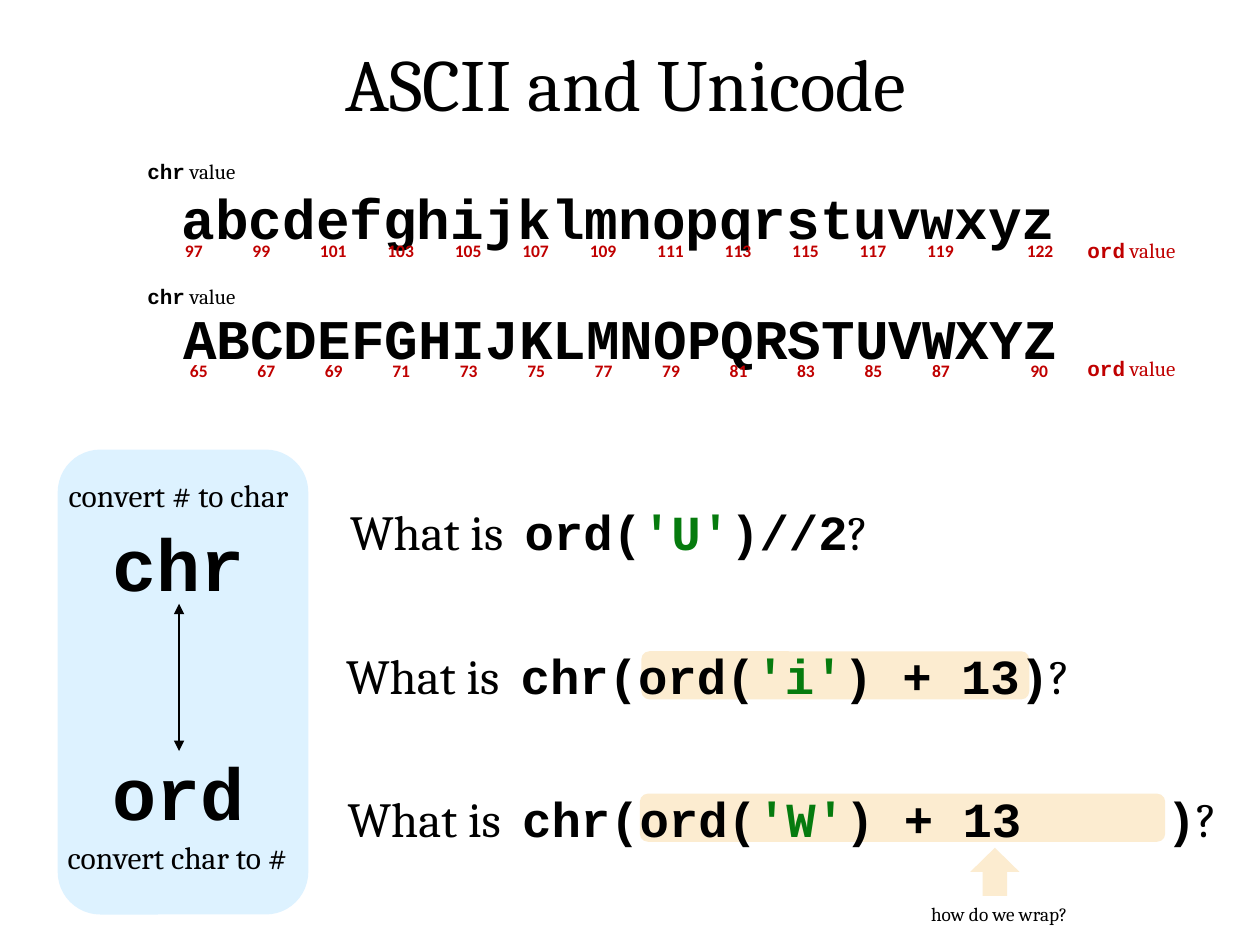
from dataclasses import dataclass
from typing import NamedTuple, Optional

from pptx import Presentation
from pptx.dml.color import RGBColor
from pptx.enum.shapes import MSO_CONNECTOR, MSO_SHAPE
from pptx.enum.text import MSO_ANCHOR, MSO_AUTO_SIZE, PP_ALIGN
from pptx.oxml.ns import qn
from pptx.util import Cm, Pt
from lxml.etree import SubElement


@dataclass(frozen=True)
class Theme:
    black: str = "000000"
    red: str = "C00000"
    green: str = "067B0E"
    blue: str = "DDF2FF"
    cream: str = "FCECD0"
    serif: str = "Cambria"
    code: str = "Courier New"
    sans: str = "Calibri"
    display: int = 42
    alphabet: int = 32
    question: int = 28
    caption: int = 18
    label: int = 12
    note: int = 11
    number: int = 10


THEME = Theme()


class Box(NamedTuple):
    """Left, top, width and height in centimetres."""
    left: float
    top: float
    width: float
    height: float

    def lengths(self) -> list:
        return [Cm(value) for value in self]


class Piece(NamedTuple):
    text: str
    font: str = THEME.serif
    color: str = THEME.black
    bold: bool = False


class Alphabet(NamedTuple):
    letters: str
    letters_box: Box
    chr_top: float
    ord_top: float
    number_left: float
    number_top: float
    last_left: float


class Question(NamedTuple):
    box: Box
    before: str
    character: str
    after: str
    tab_stop: Optional[float] = None


ALPHABETS = [
    Alphabet("abcdefghijklmnopqrstuvwxyz", Box(2.74, 3.58, 19.48, 1.6),
             3.07, 4.67, 3.48, 4.72, 20.45),
    Alphabet("ABCDEFGHIJKLMNOPQRSTUVWXYZ", Box(2.77, 5.99, 19.48, 1.6),
             5.59, 7.04, 3.58, 7.14, 20.52),
]
QUESTIONS = [
    Question(Box(6.81, 9.98, 14.55, 1.45), "ord(", "'U'", ")//2"),
    Question(Box(6.73, 12.88, 17.68, 1.45), "chr(ord(", "'i'", ") + 13)"),
    Question(Box(6.76, 15.77, 18.21, 1.45), "chr(ord(", "'W'", ") + 13\t)", 16.51),
]
NUMBER_STEP = 1.36


def code(text: str, color: str = THEME.black) -> Piece:
    return Piece(text, THEME.code, color, True)


def write(slide, box: Box, *pieces: Piece, size: int, align=PP_ALIGN.LEFT,
          wrap: bool = True, spaced: bool = True, tab_stop=None, shape=None):
    """Write one paragraph into a new text box, or into the given shape."""
    if shape is None:
        shape = slide.shapes.add_textbox(*box.lengths())
    else:
        shape.left, shape.top, shape.width, shape.height = box.lengths()
    frame = shape.text_frame
    frame.word_wrap = wrap
    frame.auto_size = MSO_AUTO_SIZE.SHAPE_TO_FIT_TEXT
    frame.vertical_anchor = MSO_ANCHOR.TOP
    paragraph = frame.paragraphs[0]
    paragraph.alignment = align
    properties = paragraph._p.get_or_add_pPr()
    if spaced:
        before = SubElement(properties, qn("a:spcBef"))
        SubElement(before, qn("a:spcPct"), val="50000")
    if tab_stop is not None:
        tabs = SubElement(properties, qn("a:tabLst"))
        SubElement(tabs, qn("a:tab"), pos=str(int(Cm(tab_stop))), algn="l")
    for piece in pieces:
        run = paragraph.add_run()
        run.text = piece.text
        run.font.name = piece.font
        run.font.size = Pt(size)
        run.font.bold = piece.bold
        run.font.color.rgb = RGBColor.from_string(piece.color)


def add_block(slide, kind, box: Box, fill: str, outlined: bool = False):
    shape = slide.shapes.add_shape(kind, *box.lengths())
    shape.shadow.inherit = False
    shape.fill.solid()
    shape.fill.fore_color.rgb = RGBColor.from_string(fill)
    if outlined:
        shape.line.color.rgb = RGBColor.from_string(fill)
        shape.line.width = Pt(1.5)
    else:
        shape.line.fill.background()
    return shape


def add_double_arrow(slide, x: float, top: float, bottom: float) -> None:
    connector = slide.shapes.add_connector(
        MSO_CONNECTOR.STRAIGHT, Cm(x), Cm(top), Cm(x), Cm(bottom))
    connector.line.color.rgb = RGBColor.from_string(THEME.black)
    connector.line.width = Pt(1.5)
    line = connector.line._get_or_add_ln()
    for end in ("a:headEnd", "a:tailEnd"):
        SubElement(line, qn(end), type="triangle")
    SubElement(connector._element.spPr, qn("a:effectLst"))


def add_alphabet(slide, row: Alphabet) -> None:
    write(slide, row.letters_box, code(row.letters),
          size=THEME.alphabet, align=PP_ALIGN.CENTER)
    # Every second letter carries its number, and so does the last one
    numbers = [(row.number_left + index * NUMBER_STEP, 3.18, letter)
               for index, letter in enumerate(row.letters[:-2:2])]
    numbers.append((row.last_left, 1.24, row.letters[-1]))
    for left, width, letter in numbers:
        write(slide, Box(left, row.number_top, width, 0.69),
              Piece(str(ord(letter)), THEME.sans, THEME.red, True), size=THEME.number)
    for name, left, top, color in (("chr", 2.72, row.chr_top, THEME.black),
                                   ("ord", 21.67, row.ord_top, THEME.red)):
        write(slide, Box(left, top, 2.36, 0.76), code(name, color),
              Piece(" value", color=color), size=THEME.label, wrap=False, spaced=False)


def add_question(slide, question: Question) -> None:
    write(slide, question.box, Piece("What is  "), code(question.before),
          code(question.character, THEME.green), code(question.after), Piece("?"),
          size=THEME.question, tab_stop=question.tab_stop)


def main() -> None:
    presentation = Presentation()
    presentation.slide_width, presentation.slide_height = Cm(25.4), Cm(19.05)
    slide = presentation.slides.add_slide(presentation.slide_layouts[5])
    write(slide, Box(6.05, 0.64, 13.13, 2.06), Piece("ASCII and Unicode"),
          size=THEME.display, align=PP_ALIGN.CENTER, shape=slide.shapes.title)

    # Highlights behind the inner expressions
    for box in (Box(12.9, 16, 10.59, 0.97), Box(12.93, 13.13, 7.82, 0.97)):
        add_block(slide, MSO_SHAPE.ROUNDED_RECTANGLE, box, THEME.cream)

    # Conversion panel
    add_block(slide, MSO_SHAPE.ROUNDED_RECTANGLE, Box(1.19, 9.09, 5, 9.32),
              THEME.blue, outlined=True)
    for name, top in (("chr", 10.31), ("ord", 14.94)):
        write(slide, Box(1.27, top, 4.65, 2.06), code(name),
              size=THEME.display, align=PP_ALIGN.CENTER)
    add_double_arrow(slide, 3.61, 12.17, 15.14)
    for caption, box in (("convert char to #", Box(0.71, 16.76, 5.74, 1.02)),
                         ("convert # to char", Box(0.64, 9.47, 5.92, 1.02))):
        write(slide, box, Piece(caption), size=THEME.caption, align=PP_ALIGN.CENTER)

    # Alphabets with their character codes
    for row in ALPHABETS:
        add_alphabet(slide, row)

    # Questions
    for question in QUESTIONS:
        add_question(slide, question)

    # Hint under the last question
    arrow = add_block(slide, MSO_SHAPE.DOWN_ARROW, Box(19.56, 17.09, 0.99, 0.97), THEME.cream)
    arrow.rotation = 180
    write(slide, Box(18.42, 18.06, 3.45, 0.74), Piece("how do we wrap?"),
          size=THEME.note, align=PP_ALIGN.CENTER, wrap=False, spaced=False)

    presentation.save("out.pptx")


if __name__ == "__main__":
    main()
